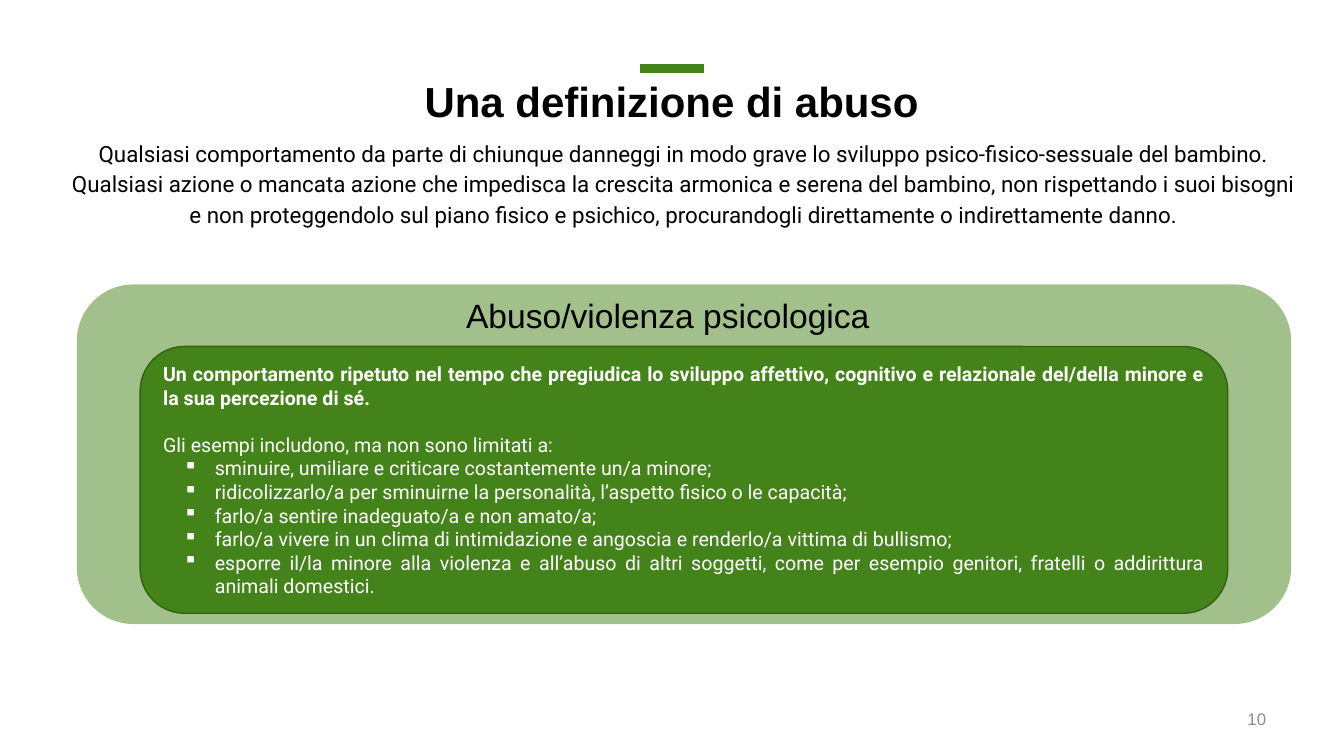
from lxml import etree
from pptx import Presentation
from pptx.dml.color import RGBColor
from pptx.enum.shapes import MSO_CONNECTOR, MSO_SHAPE
from pptx.enum.text import MSO_ANCHOR, MSO_AUTO_SIZE, PP_ALIGN
from pptx.oxml.ns import qn
from pptx.util import Pt

STRAIGHT = MSO_CONNECTOR.STRAIGHT
ROUNDED = MSO_SHAPE.ROUNDED_RECTANGLE
TOP, MIDDLE = MSO_ANCHOR.TOP, MSO_ANCHOR.MIDDLE
NO_AUTOFIT = MSO_AUTO_SIZE.NONE
LEFT, CENTER = PP_ALIGN.LEFT, PP_ALIGN.CENTER
RIGHT, JUSTIFY = PP_ALIGN.RIGHT, PP_ALIGN.JUSTIFY

COLORS = {"green": "448319", "edge": "326112", "black": "000000",
          "white": "FFFFFF", "grey": "8C8C8C"}
HEADING_FONT, TEXT_FONT = "Arial", "Roboto"

DEFINITION = (
    "Qualsiasi comportamento da parte di chiunque danneggi in modo grave lo "
    "sviluppo psico-fisico-sessuale del bambino. Qualsiasi azione o mancata "
    "azione che impedisca la crescita armonica e serena del bambino, non "
    "rispettando i suoi bisogni e non proteggendolo sul piano fisico e psichico, "
    "procurandogli direttamente o indirettamente danno.")
SUMMARY = (
    "Un comportamento ripetuto nel tempo che pregiudica lo sviluppo affettivo, "
    "cognitivo e relazionale del/della minore e la sua percezione di sé.")
EXAMPLES_INTRO = "Gli esempi includono, ma non sono limitati a:"
EXAMPLES = [
    "sminuire, umiliare e criticare costantemente un/a minore;",
    "ridicolizzarlo/a per sminuirne la personalità, l’aspetto fisico o le capacità;",
    "farlo/a sentire inadeguato/a e non amato/a;",
    "farlo/a vivere in un clima di intimidazione e angoscia e renderlo/a vittima "
    "di bullismo;",
    "esporre il/la minore alla violenza e all’abuso di altri soggetti, come per "
    "esempio genitori, fratelli o addirittura animali domestici.",
]


class AbusePage:
    def __init__(self, deck):
        self.page = deck.slides.add_slide(deck.slide_layouts[1])

    def color(self, name):
        return RGBColor.from_string(COLORS[name])

    def paragraph(self, box, text, size, font, color, align, bold=False,
                  before=0, after=0, spacing=1.0, bullet=None):
        """Fill the first paragraph if it is free, else append one."""
        para = box.text_frame.paragraphs[0]
        if para.runs:
            para = box.text_frame.add_paragraph()
        properties = para._p.get_or_add_pPr()
        properties.set("marL", str(Pt(37) if bullet else 0))
        properties.set("indent", str(Pt(-22.5) if bullet else 0))
        if bullet:
            etree.SubElement(properties, qn("a:buChar")).set("char", bullet)
        else:
            etree.SubElement(properties, qn("a:buNone"))
        para.alignment = align
        para.line_spacing = spacing
        para.space_before, para.space_after = Pt(before), Pt(after)
        span = para.add_run()
        span.text = text
        span.font.size, span.font.name, span.font.bold = Pt(size), font, bold
        span.font.color.rgb = self.color(color)

    def frame(self, box, anchor=TOP, inset=3.6):
        """Set wrapping, anchor and vertical margins of a text frame."""
        frame = box.text_frame
        frame.word_wrap = True
        frame.auto_size = NO_AUTOFIT
        frame.vertical_anchor = anchor
        frame.margin_left = frame.margin_right = Pt(7.2)
        frame.margin_top = frame.margin_bottom = Pt(inset)
        return box

    def placeholder(self, index, left, top, width, height, inset=3.6):
        box = self.page.placeholders[index]
        box.left, box.top = Pt(left), Pt(top)
        box.width, box.height = Pt(width), Pt(height)
        return self.frame(box, inset=inset)

    def text_box(self, left, top, width, height, anchor=TOP):
        box = self.page.shapes.add_textbox(Pt(left), Pt(top), Pt(width), Pt(height))
        return self.frame(box, anchor)

    def panel(self, left, top, width, height, alpha=None, edge=None):
        """Add a rounded green panel; alpha is its opacity in percent."""
        box = self.page.shapes.add_shape(
            ROUNDED, Pt(left), Pt(top), Pt(width), Pt(height))
        box.shadow.inherit = False
        box.fill.solid()
        box.fill.fore_color.rgb = self.color("green")
        if alpha:
            tint = box.fill._xPr.find(".//" + qn("a:srgbClr"))
            etree.SubElement(tint, qn("a:alpha")).set("val", str(alpha * 1000))
        if edge:
            box.line.color.rgb = self.color(edge)
            box.line.width = Pt(1)
        else:
            box.line.fill.background()
        return self.frame(box, MIDDLE)

    def accent(self, left, right, height, width):
        bar = self.page.shapes.add_connector(
            STRAIGHT, Pt(left), Pt(height), Pt(right), Pt(height))
        bar.line.color.rgb = self.color("green")
        bar.line.width = Pt(width)
        etree.SubElement(bar._element.spPr, qn("a:effectLst"))


def main():
    deck = Presentation()
    deck.slide_width, deck.slide_height = Pt(960), Pt(540)
    page = AbusePage(deck)

    page.accent(457.2, 502.8, 49, 6)
    title = page.placeholder(0, 49, 54.7, 861.8, 45.4)
    page.paragraph(title, "Una definizione di abuso", 30, HEADING_FONT, "black",
                   CENTER, bold=True, spacing=0.9)
    body = page.placeholder(1, 43.2, 88.6, 889.9, 81.4, inset=8.64)
    page.paragraph(body, DEFINITION, 16, TEXT_FONT, "black", CENTER,
                   after=5, spacing=1.14)

    page.panel(54.9, 203.2, 867.4, 242.6, alpha=50)
    details = page.panel(100.1, 247.5, 776.9, 190.6, edge="edge")
    style = (14, TEXT_FONT, "white")
    page.paragraph(details, SUMMARY, *style, JUSTIFY, bold=True)
    page.paragraph(details, EXAMPLES_INTRO, *style, JUSTIFY, before=16.8)
    for example in EXAMPLES:
        align = JUSTIFY if example == EXAMPLES[-1] else LEFT
        page.paragraph(details, example, *style, align, bullet="▪")

    heading = page.text_box(281.5, 207.4, 391, 36)
    page.paragraph(heading, "Abuso/violenza psicologica", 24, HEADING_FONT,
                   "black", CENTER)
    number = page.text_box(860.4, 502.6, 51.1, 22.3, MIDDLE)
    page.paragraph(number, "10", 12, HEADING_FONT, "grey", RIGHT)

    deck.save("out.pptx")


if __name__ == "__main__":
    main()
